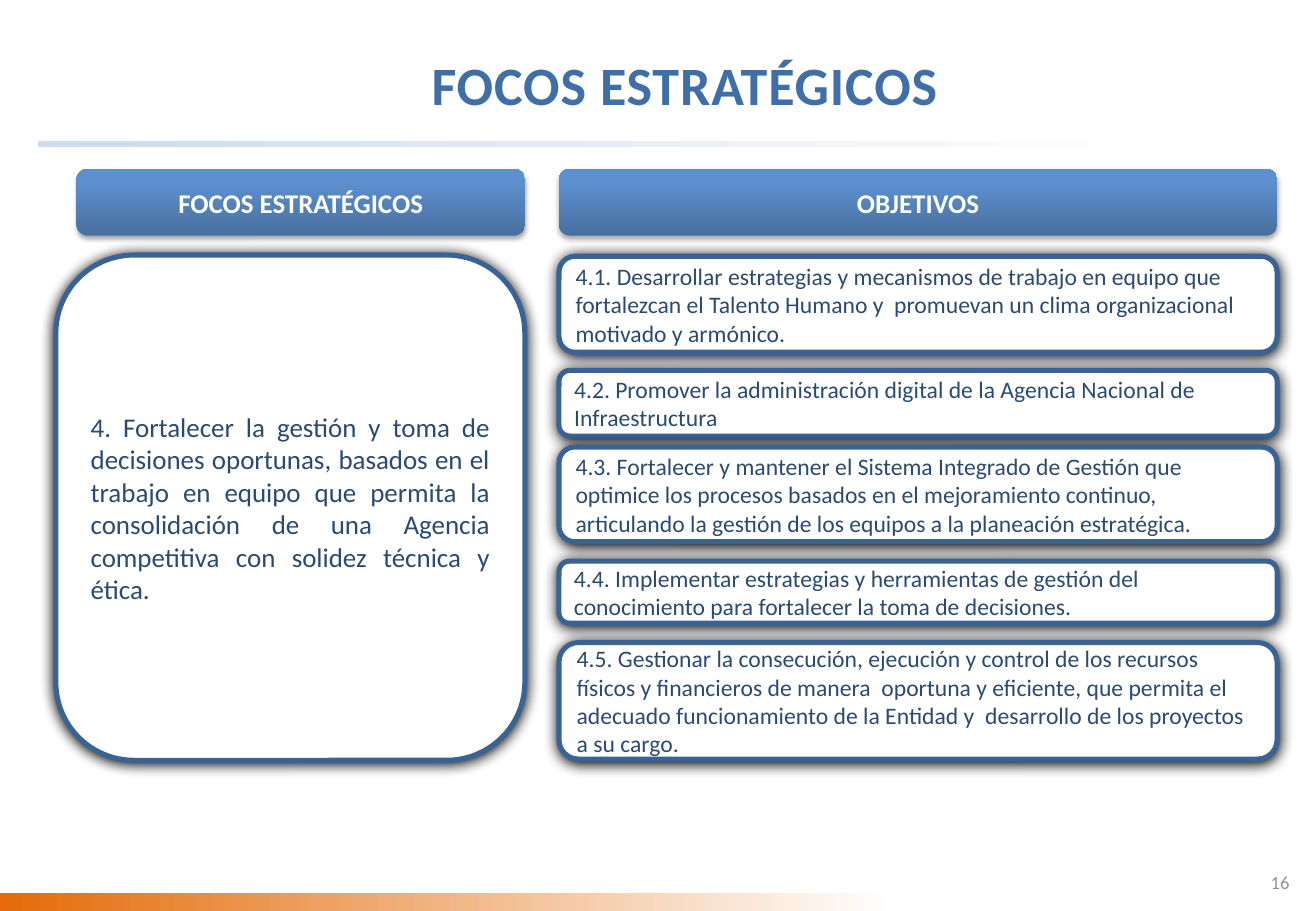
from lxml import etree
from pptx import Presentation
from pptx.dml.color import RGBColor
from pptx.enum import shapes, text
from pptx.oxml.ns import qn
from pptx.util import Inches, Pt

TITLE_BLUE = RGBColor(0x40, 0x6F, 0xA7)
BORDER_BLUE = RGBColor(0x39, 0x63, 0x95)
TEXT_BLUE = RGBColor(0x2B, 0x4A, 0x6F)
HEADER_DARK = RGBColor(0x47, 0x6F, 0x9F)
HEADER_MID = RGBColor(0x5D, 0x90, 0xCE)
HEADER_LIGHT = RGBColor(0x5B, 0x91, 0xD1)
RULE_BLUE = RGBColor(0xCD, 0xDB, 0xEC)
ORANGE = RGBColor(0xE3, 0x6C, 0x09)
GREY = RGBColor(0x8E, 0x93, 0x9E)
WHITE = RGBColor(0xFF, 0xFF, 0xFF)
BLACK = RGBColor(0, 0, 0)

HEADER_STOPS = [(0, HEADER_DARK), (80, HEADER_MID), (100, HEADER_LIGHT)]
FOCUS = ("4. Fortalecer la gestión y toma de decisiones oportunas, basados en el trabajo "
         "en equipo que permita la consolidación de una Agencia competitiva con solidez "
         "técnica y ética.")
OBJECTIVES = [
    (0.17, 0.79, "4.1. Desarrollar estrategias y mecanismos de trabajo en equipo que "
     "fortalezcan el Talento Humano y  promuevan un clima organizacional motivado y armónico."),
    (1.11, 0.54, "4.2. Promover la administración digital de la Agencia Nacional de "
     "Infraestructura"),
    (1.74, 0.78, "4.3. Fortalecer y mantener el Sistema Integrado de Gestión que optimice los "
     "procesos basados en el mejoramiento continuo, articulando la gestión de los equipos "
     "a la planeación estratégica."),
    (2.68, 0.51, "4.4. Implementar estrategias y herramientas de gestión del conocimiento "
     "para fortalecer la toma de decisiones."),
    (3.35, 0.96, "4.5. Gestionar la consecución, ejecución y control de los recursos físicos "
     "y financieros de manera  oportuna y eficiente, que permita el adecuado funcionamiento "
     "de la Entidad y  desarrollo de los proyectos a su cargo."),
]
HEADER_HEIGHT = 0.55


def add_color(parent, color, alpha=100):
    """Append an RGB colour with an opacity in percent."""
    rgb = etree.SubElement(parent, qn("a:srgbClr"), val=str(color))
    etree.SubElement(rgb, qn("a:alpha"), val=str(alpha * 1000))


def write(frame, wording, align, **font):
    """Write one middle-anchored paragraph in the given font."""
    frame.word_wrap = True
    frame.vertical_anchor = text.MSO_ANCHOR.MIDDLE
    paragraph = frame.paragraphs[0]
    paragraph.alignment = align
    run = paragraph.add_run()
    run.text = wording
    run.font.color.rgb = font.pop("color")
    for key, value in {"name": "Calibri", **font}.items():
        setattr(run.font, key, value)
    return run


def add_block(slide, kind, box):
    """Add a borderless preset shape without a shadow."""
    block = slide.shapes.add_shape(kind, *map(Inches, box))
    block.shadow.inherit = False
    block.line.fill.background()
    return block


def fade(block, stops, angle=0):
    """Fill a shape with a linear gradient."""
    block.fill.gradient()
    block.fill.gradient_angle = angle
    stop_list = block._element.spPr.find(qn("a:gradFill")).find(qn("a:gsLst"))
    stop_list.clear()
    for position, color in stops:
        add_color(etree.SubElement(stop_list, qn("a:gs"), pos=str(position * 1000)), color)


def cast_shadow(block, blur, distance, alpha):
    """Give a shape a black shadow falling downwards."""
    effects = block._element.spPr.find(qn("a:effectLst"))
    shadow = etree.SubElement(effects, qn("a:outerShdw"), blurRad=str(Pt(blur)),
                              dist=str(Pt(distance)), dir="5400000", rotWithShape="0")
    add_color(shadow, BLACK, alpha)


def add_header(slide, box, wording):
    """Add a blue column header."""
    header = add_block(slide, shapes.MSO_SHAPE.ROUNDED_RECTANGLE, box)
    fade(header, HEADER_STOPS, 90)
    cast_shadow(header, 3.1, 1.8, 35)
    write(header.text_frame, wording, text.PP_ALIGN.CENTER,
          size=Pt(16), bold=True, color=WHITE)


def add_card(slide, box, wording, size, align):
    """Add a white card with a blue border."""
    card = add_block(slide, shapes.MSO_SHAPE.ROUNDED_RECTANGLE, box)
    card.fill.solid()
    card.fill.fore_color.rgb = WHITE
    card.line.color.rgb = BORDER_BLUE
    card.line.width = Pt(3)
    cast_shadow(card, 8.5, 1, 100)
    write(card.text_frame, wording, align, size=Pt(size), color=TEXT_BLUE)


def add_title(slide, box):
    """Place the slide title in its placeholder."""
    title = slide.shapes.title
    for key, value in zip(("left", "top", "width", "height"), box):
        setattr(title, key, Inches(value))
    run = write(title.text_frame, "FOCOS ESTRATÉGICOS", text.PP_ALIGN.CENTER,
                size=Pt(32), bold=True, color=TITLE_BLUE)
    run.font._element.set("spc", "50")


def add_frame(slide, box):
    """Add the title rule, the footer band and the page number."""
    left, top, width, height = box
    bars = [((left + 0.31, top + 1.16, 9.39, 0.05), RULE_BLUE),
            ((left, top + height - 0.15, 7.35, 0.15), ORANGE)]
    for bar_box, color in bars:
        bar = add_block(slide, shapes.MSO_SHAPE.RECTANGLE, bar_box)
        fade(bar, [(0, color), (100, WHITE)])
    number_box = (left + width - 0.53, top + height - 0.44, 0.47, 0.4)
    page_number = slide.shapes.add_textbox(*map(Inches, number_box))
    write(page_number.text_frame, "16", text.PP_ALIGN.CENTER, size=Pt(11), color=GREY)


def add_focus_column(slide, box):
    """Add the strategic focus with its header."""
    left, top, width, height = box
    indent = 0.17
    add_header(slide, (left + indent, top, width - indent, HEADER_HEIGHT),
               "FOCOS ESTRATÉGICOS")
    add_card(slide, (left, top + 0.71, width, height - 0.71), FOCUS, 16,
             text.PP_ALIGN.JUSTIFY)


def add_objectives_column(slide, box):
    """Add the stack of objectives under its header."""
    left, top, width, height = box
    add_header(slide, (left, top, width, HEADER_HEIGHT), "OBJETIVOS")
    for offset, card_height, wording in OBJECTIVES:
        add_card(slide, (left, top + HEADER_HEIGHT + offset, width, card_height),
                 wording, 14, text.PP_ALIGN.LEFT)


def main():
    """Build and save the slide."""
    deck = Presentation()
    deck.slide_width, deck.slide_height = Inches(10.83), Inches(7.5)
    slide = deck.slides.add_slide(deck.slide_layouts[5])
    add_frame(slide, (0, 0, 10.83, 7.5))
    add_title(slide, (0.22, 0.37, 10.83, 0.64))
    add_focus_column(slide, (0.46, 1.39, 3.86, 4.87))
    add_objectives_column(slide, (4.6, 1.39, 5.91, 4.87))
    deck.save("out.pptx")


if __name__ == "__main__":
    main()
